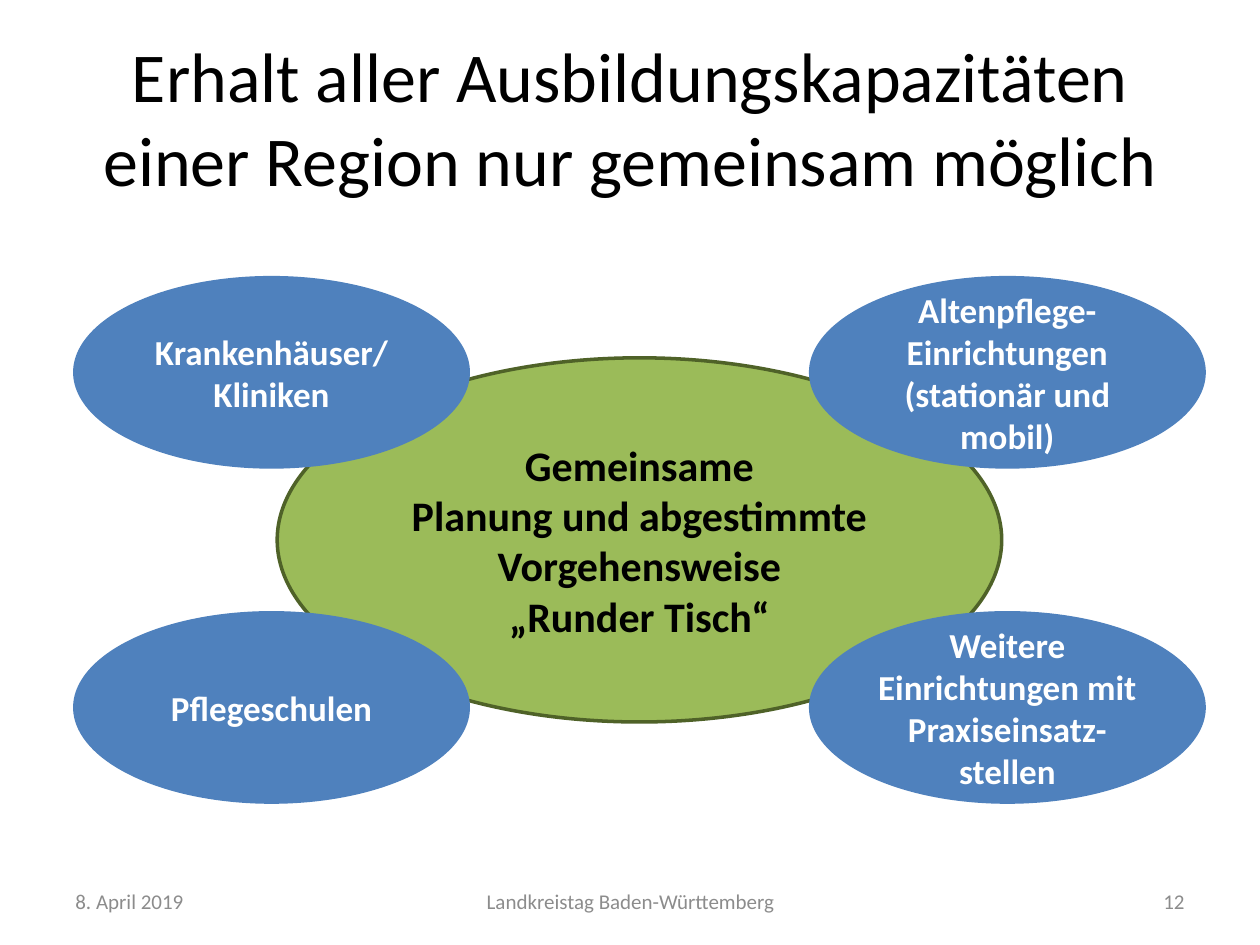
from pptx import Presentation
from pptx.util import Inches, Pt
from pptx.dml.color import RGBColor
from pptx.enum.shapes import MSO_SHAPE
from pptx.enum.text import MSO_ANCHOR, PP_ALIGN

OVAL = MSO_SHAPE.OVAL
MIDDLE = MSO_ANCHOR.MIDDLE
LEFT, CENTER, RIGHT = PP_ALIGN.LEFT, PP_ALIGN.CENTER, PP_ALIGN.RIGHT
COLORS = {"black": "000000", "white": "FFFFFF", "gray": "8C8C8C",
          "green": "9BBB59", "edge": "4F6228", "blue": "4F81BD"}


def write(shape, text, size, color, align=CENTER, bold=False, wrap=True):
    frame = shape.text_frame
    frame.word_wrap = wrap
    frame.vertical_anchor = MIDDLE
    para = frame.paragraphs[0]
    para.text = text
    para.alignment = align
    for run in para.runs:
        run.font.name = "Calibri"
        run.font.size = Pt(size)
        run.font.bold = bold
        run.font.color.rgb = RGBColor.from_string(COLORS[color])


def add_oval(left, top, width, height, fill, edge=None):
    oval = slide.shapes.add_shape(
        OVAL, Inches(left), Inches(top), Inches(width), Inches(height))
    oval.shadow.inherit = False
    oval.fill.solid()
    oval.fill.fore_color.rgb = RGBColor.from_string(COLORS[fill])
    if edge:
        oval.line.color.rgb = RGBColor.from_string(COLORS[edge])
        oval.line.width = Pt(2)
    else:
        oval.line.fill.background()
    return oval


prs = Presentation()
prs.slide_width, prs.slide_height = Inches(10), Inches(7.5)
slide = prs.slides.add_slide(prs.slide_layouts[5])

title = slide.shapes.title
title.left, title.top = Inches(0.5), Inches(0.3)
title.width, title.height = Inches(9), Inches(1.25)
write(title, "Erhalt aller Ausbildungskapazitäten einer Region nur gemeinsam möglich",
      40, "black")

table = add_oval(2.2, 2.84, 5.75, 2.89, "green", "edge")
write(table, "Gemeinsame\nPlanung und abgestimmte\nVorgehensweise\n„Runder Tisch“",
      24, "black", bold=True, wrap=False)

west, east = 0.58, 6.42
north, south = 2.19, 4.85
partners = [
    (west, south, "Pflegeschulen"),
    (west, north, "Krankenhäuser/\nKliniken"),
    (east, north, "Altenpflege-\nEinrichtungen\n(stationär und\nmobil)"),
    (east, south, "Weitere\nEinrichtungen mit\nPraxiseinsatz-\nstellen"),
]
for left, top, text in partners:
    oval = add_oval(left, top, 3.15, 1.53, "blue")
    write(oval, text, 20, "white", bold=True, wrap=False)

footer = [
    (0.5, 2.33, "8. April 2019", LEFT),
    (3.42, 3.17, "Landkreistag Baden-Württemberg", CENTER),
    (7.17, 2.33, "12", RIGHT),
]
for left, width, text, align in footer:
    box = slide.shapes.add_textbox(
        Inches(left), Inches(6.95), Inches(width), Inches(0.4))
    write(box, text, 12, "gray", align)

prs.save("out.pptx")
